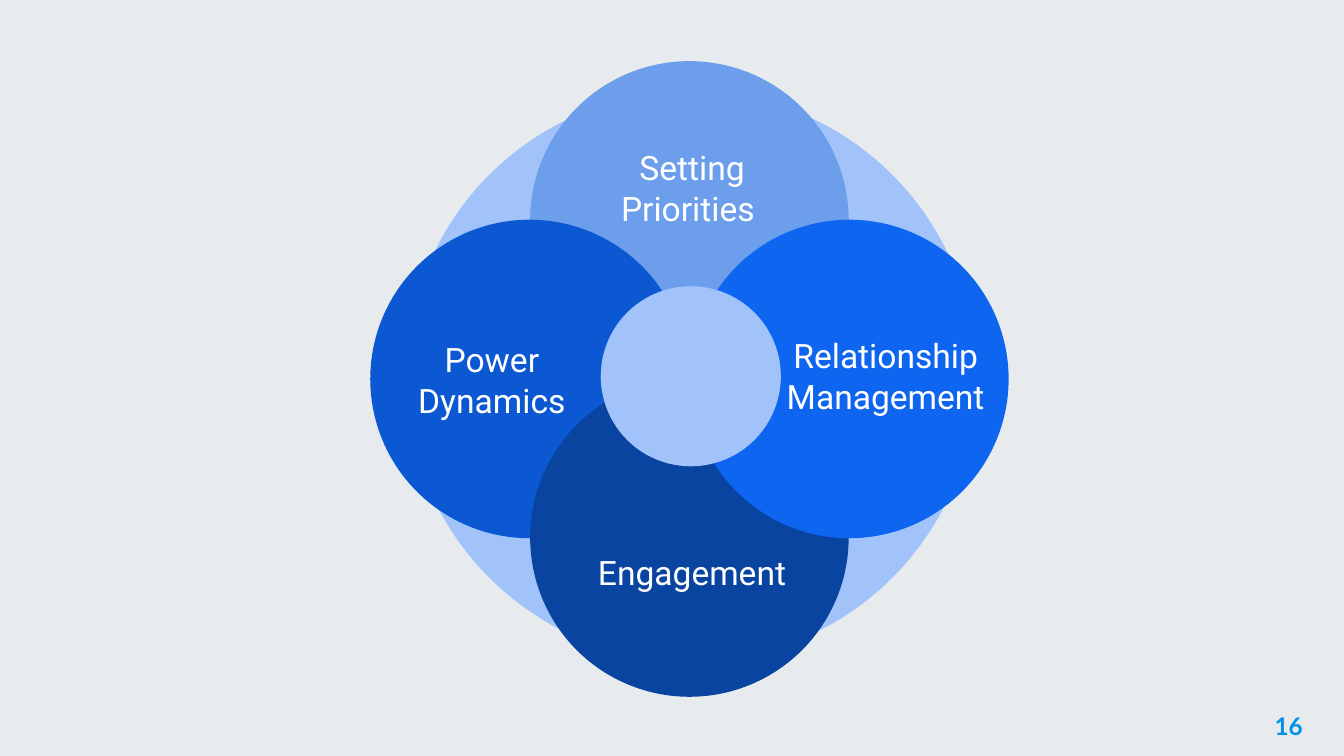
from pptx import Presentation
from pptx.dml.color import RGBColor
from pptx.enum.shapes import MSO_SHAPE
from pptx.enum.text import MSO_ANCHOR, PP_ALIGN
from pptx.util import Inches, Pt

BACKGROUND = RGBColor(0xE7, 0xEB, 0xED)
PALE_BLUE = RGBColor(0xA1, 0xC3, 0xFA)
SOFT_BLUE = RGBColor(0x6D, 0x9E, 0xEB)
DEEP_BLUE = RGBColor(0x0C, 0x58, 0xD3)
NAVY = RGBColor(0x09, 0x44, 0xA1)
BRIGHT_BLUE = RGBColor(0x0E, 0x65, 0xF0)
NUMBER_BLUE = RGBColor(0x00, 0x91, 0xEA)
WHITE = RGBColor(0xFF, 0xFF, 0xFF)

RING_CENTER = (5.14, 2.8)
PETAL_CENTER = (5.13, 2.82)
PETAL_OFFSET = (1.19, 1.18)
RING_SIZE, PETAL_SIZE, HUB_SIZE = 4.24, 2.37, 1.34

PETALS = [
    ("Setting Priorities ", SOFT_BLUE, (0, -1), (4.33, 1.01, 1.64, 0.77)),
    ("Power Dynamics", DEEP_BLUE, (-1, 0), (2.84, 2.44, 1.64, 0.77)),
    ("Engagement", NAVY, (0, 1), (4.33, 3.87, 1.64, 0.77)),
    ("Relationship Management", BRIGHT_BLUE, (1, 0), (5.75, 2.39, 1.68, 0.81)),
]


class SlidePainter:
    """Draws circles and text on one slide in a shared style."""

    def __init__(self, page):
        self.page = page

    def background(self, color):
        fill = self.page.background.fill
        fill.solid()
        fill.fore_color.rgb = color

    def circle(self, center, size, color):
        left, top = (Inches(middle - size / 2) for middle in center)
        shape = self.page.shapes.add_shape(
            MSO_SHAPE.OVAL, left, top, Inches(size), Inches(size))
        shape.shadow.inherit = False
        shape.fill.solid()
        shape.fill.fore_color.rgb = color
        shape.line.fill.background()

    def text(self, words, place, size=18, font="Roboto", color=WHITE, bold=False,
             align=PP_ALIGN.CENTER, anchor=MSO_ANCHOR.MIDDLE):
        box = self.page.shapes.add_textbox(*map(Inches, place))
        frame = box.text_frame
        frame.word_wrap = True
        frame.vertical_anchor = anchor
        frame.margin_left = frame.margin_right = Inches(0.1)
        frame.margin_top = frame.margin_bottom = Inches(0.1)
        para = frame.paragraphs[0]
        para.text = words
        para.alignment = align
        para.font.name = font
        para.font.size = Pt(size)
        para.font.bold = bold
        para.font.color.rgb = color


def main():
    deck = Presentation()
    deck.slide_width = Inches(10)
    deck.slide_height = deck.slide_width * 9 // 16
    painter = SlidePainter(deck.slides.add_slide(deck.slide_layouts[6]))

    painter.background(BACKGROUND)
    painter.text("16", (9.19, 5.19, 0.6, 0.43), size=13, font="Lato", color=NUMBER_BLUE,
                 bold=True, align=PP_ALIGN.RIGHT, anchor=MSO_ANCHOR.TOP)
    painter.circle(RING_CENTER, RING_SIZE, PALE_BLUE)
    for label, color, steps, place in PETALS:
        center = [middle + step * offset
                  for middle, step, offset in zip(PETAL_CENTER, steps, PETAL_OFFSET)]
        painter.circle(center, PETAL_SIZE, color)
        painter.text(label, place)
    painter.circle(RING_CENTER, HUB_SIZE, PALE_BLUE)

    deck.save("out.pptx")


if __name__ == "__main__":
    main()
